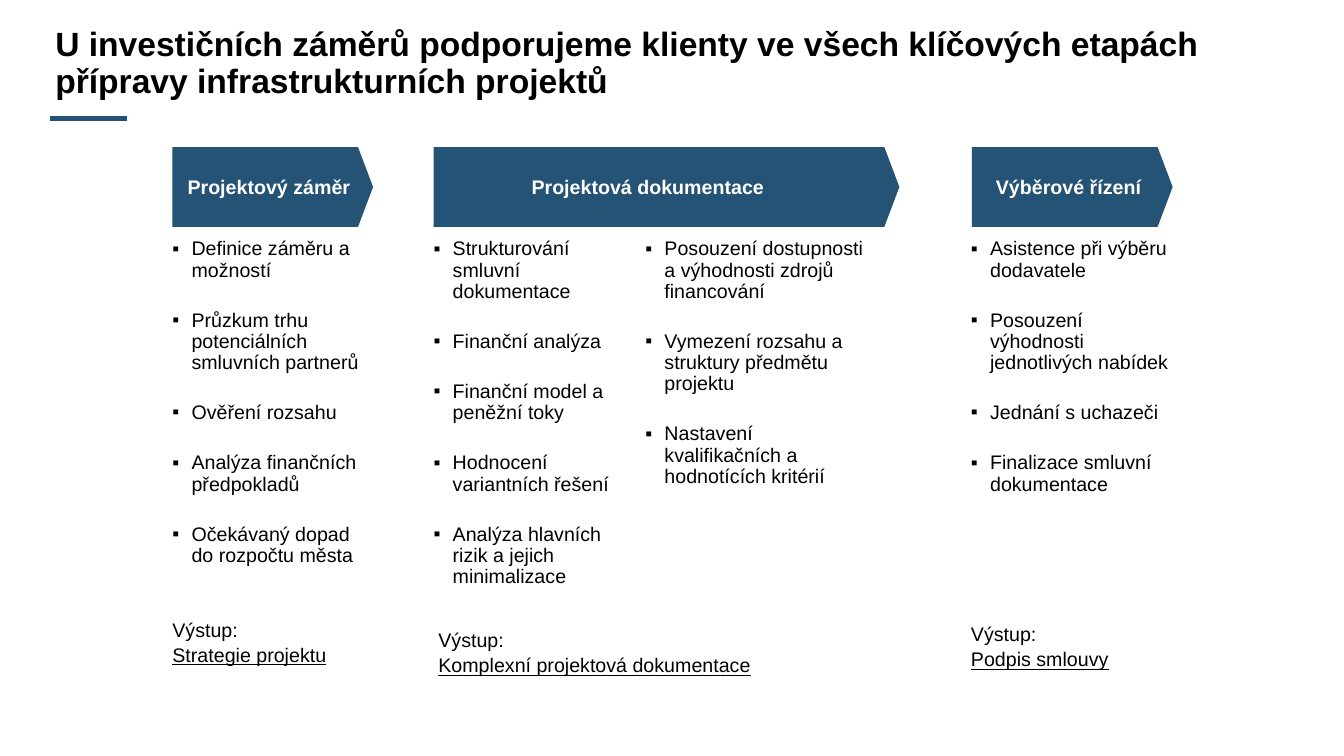
"""Builds a slide on the stages of preparing infrastructure projects."""
from lxml.etree import SubElement
from pptx import Presentation
from pptx.dml.color import RGBColor
from pptx.enum.shapes import MSO_CONNECTOR, MSO_SHAPE
from pptx.enum.text import MSO_ANCHOR, PP_ALIGN
from pptx.oxml.ns import qn
from pptx.util import Inches, Pt

BLUE, BLACK, WHITE = "245375", "000000", "FFFFFF"
LINE_GAP, BULLET_GAP = 2.8, 20.7
HEADER_TOP, HEADER_HEIGHT = 1.46, 0.79


def color(value):
    return RGBColor.from_string(value)


def write(frame, text, size=14, ink=BLACK, bold=False, underline=False,
          align=PP_ALIGN.LEFT, spacing=0.9, before=0, bullet=False):
    para = frame.paragraphs[0]
    if para.runs:
        para = frame.add_paragraph()
    if bullet:
        props = para._p.get_or_add_pPr()
        props.set("marL", str(Inches(0.19)))
        props.set("indent", str(-Inches(0.19)))
        SubElement(props, qn("a:buFont")).set("typeface", "Arial")
        SubElement(props, qn("a:buChar")).set("char", "▪")
    para.alignment = align
    para.line_spacing = spacing
    para.space_before = Pt(before)
    span = para.add_run()
    span.text = text
    font = span.font
    font.name, font.size = "Arial", Pt(size)
    font.bold, font.underline = bold, underline
    font.color.rgb = color(ink)


deck = Presentation()
deck.slide_width, deck.slide_height = Inches(13.33), Inches(7.5)
page = deck.slides.add_slide(deck.slide_layouts[6])
shapes = page.shapes

headers = [
    (6.93, 1.99, 0.188, ""),
    (1.71, 1.99, 0.188, "Projektový záměr"),
    (4.3, 4.42, 0.424, "Projektová dokumentace"),
    (9.64, 1.99, 0.188, "Výběrové řízení"),
]
for left, width, point, label in headers:
    header = shapes.add_shape(MSO_SHAPE.PENTAGON, Inches(left), Inches(HEADER_TOP),
                              Inches(width), Inches(HEADER_HEIGHT))
    header.adjustments[0] = point
    header.shadow.inherit = False
    header.fill.solid()
    header.fill.fore_color.rgb = color(BLUE)
    header.line.fill.background()
    if label:
        frame = header.text_frame
        frame.margin_left = frame.margin_right = frame.margin_top = frame.margin_bottom = 0
        frame.word_wrap = False
        frame.vertical_anchor = MSO_ANCHOR.MIDDLE
        write(frame, label, ink=WHITE, bold=True, align=PP_ALIGN.CENTER, spacing=1.0)

columns = [
    (1.71, 1.99, 4.5, [
        "Definice záměru a možností",
        "Průzkum trhu potenciálních smluvních partnerů",
        "Ověření rozsahu",
        "Analýza finančních předpokladů",
        "Očekávaný dopad do rozpočtu města",
    ], "Strategie projektu", 38.5),
    (4.3, 1.99, 4.19, [
        "Strukturování smluvní dokumentace",
        "Finanční analýza",
        "Finanční model a peněžní toky",
        "Hodnocení variantních řešení",
        "Analýza hlavních rizik a jejich minimalizace",
    ], "", 0),
    (6.4, 2.21, 4.5, [
        "Posouzení dostupnosti a výhodnosti zdrojů financování",
        "Vymezení rozsahu a struktury předmětu projektu",
        "Nastavení kvalifikačních a hodnotících kritérií",
    ], "", 0),
    (9.63, 1.99, 4.74, [
        "Asistence při výběru dodavatele",
        "Posouzení výhodnosti jednotlivých nabídek",
        "Jednání s uchazeči",
        "Finalizace smluvní dokumentace",
    ], "Podpis smlouvy", 92.5),
]
for left, width, height, items, output, output_gap in columns:
    box = shapes.add_textbox(Inches(left), Inches(2.37), Inches(width), Inches(height))
    frame = box.text_frame
    frame.word_wrap = True
    frame.margin_left = frame.margin_right = frame.margin_top = frame.margin_bottom = 0
    for index, item in enumerate(items):
        write(frame, item, bullet=True, before=BULLET_GAP if index else 0)
    if output:
        write(frame, "Výstup:", before=output_gap)
        write(frame, output, underline=True, before=LINE_GAP)

output_box = shapes.add_textbox(Inches(4.25), Inches(6.21), Inches(5), Inches(0.57))
output_box.text_frame.word_wrap = True
write(output_box.text_frame, "Výstup:")
write(output_box.text_frame, "Komplexní projektová dokumentace", underline=True, before=LINE_GAP)

accent = shapes.add_connector(MSO_CONNECTOR.STRAIGHT, Inches(0.5), Inches(1.18),
                              Inches(1.26), Inches(1.18))
accent.line.color.rgb = color(BLUE)
accent.line.width = Pt(3.5)
SubElement(accent._element.spPr, qn("a:effectLst"))

title = shapes.add_textbox(Inches(0.45), Inches(0.22), Inches(12.13), Inches(0.83))
title.text_frame.word_wrap = True
write(title.text_frame, "U investičních záměrů podporujeme klienty ve všech klíčových etapách "
      "přípravy infrastrukturních projektů", size=24, bold=True, spacing=0.92)

deck.save("out.pptx")
